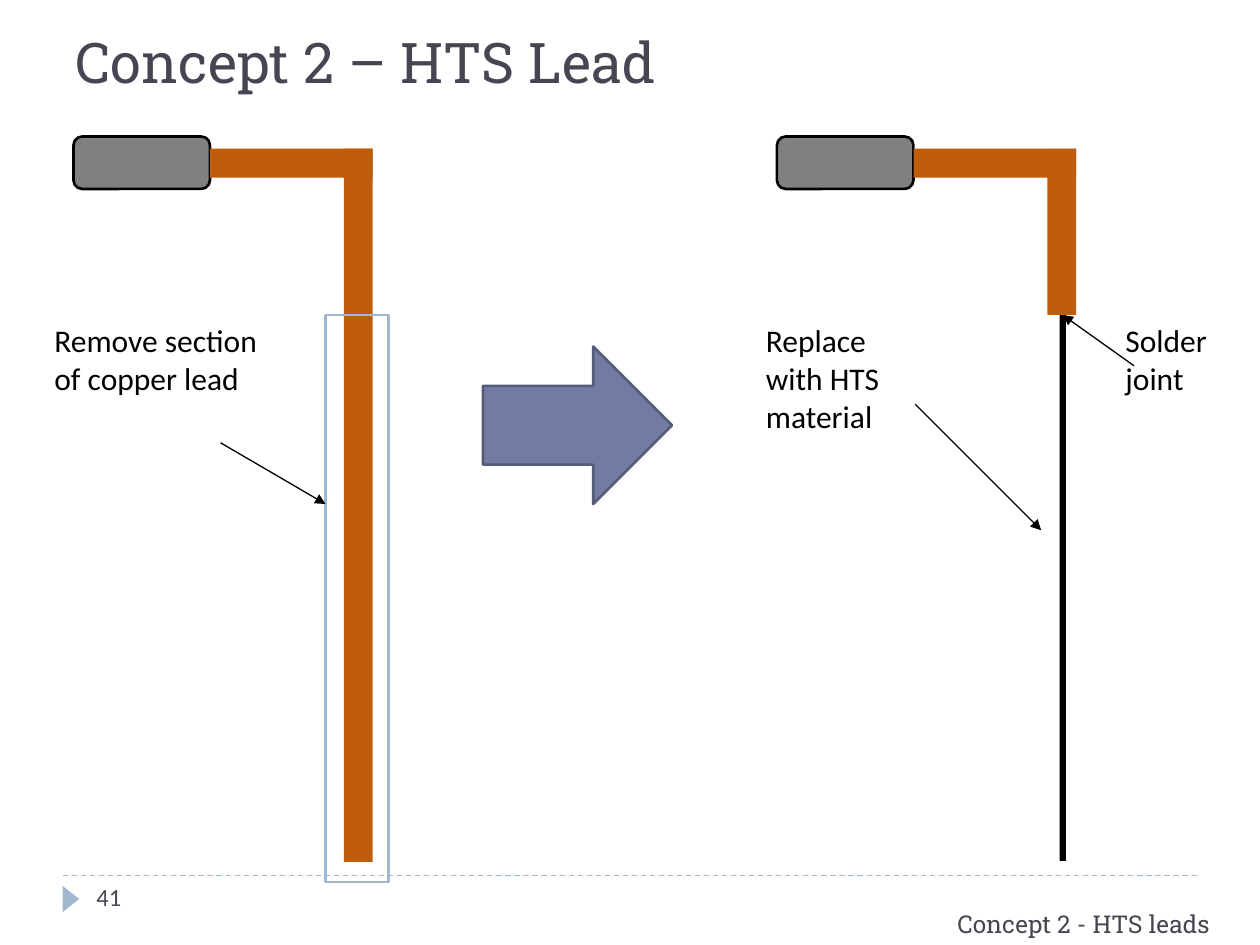
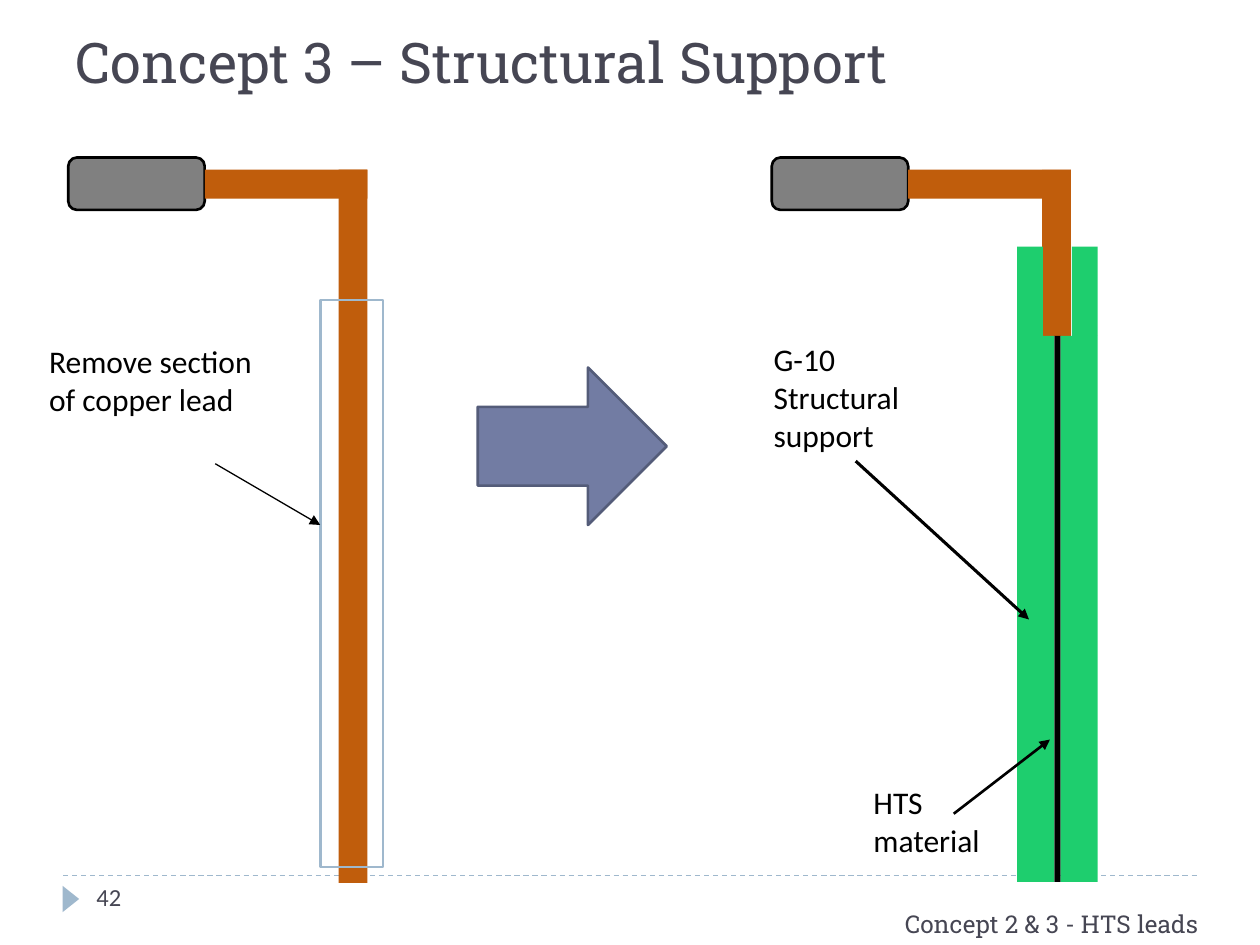
import pptx
import pptx.dml.color
import pptx.enum.dml
import pptx.enum.shapes
import pptx.enum.text
import pptx.oxml
import pptx.oxml.ns
import pptx.util

Pt = pptx.util.Pt
RGBColor = pptx.dml.color.RGBColor
SHAPE = pptx.enum.shapes.MSO_SHAPE
ANCHOR = pptx.enum.text.MSO_ANCHOR

INK = RGBColor(0x46, 0x46, 0x53)
BLACK = RGBColor(0x00, 0x00, 0x00)
PALE_BLUE = RGBColor(0x9F, 0xB8, 0xCD)
STEEL = RGBColor(0x80, 0x80, 0x80)
COPPER = RGBColor(0xC0, 0x5D, 0x0C)
ARROW_FILL = RGBColor(0x72, 0x7C, 0xA3)
ARROW_EDGE = RGBColor(0x54, 0x5C, 0x79)
SUPPORT_GREEN = RGBColor(0x1E, 0xCE, 0x6E)

HEADING_FONT = "Roboto Slab"
LABEL_FONT = "Calibri"

BAR = 16.5
ELBOW_RIGHT = 171
JOINT_TOP = 102
JOINT_CENTRE = 163.25
HTS_WIDTH = 3.6
HTS_LENGTH = 312
LONG_LEAD = 407.5
SHORT_LEAD = 95
AFTER_OFFSET = 402


def add_block(page, kind, left, top, width, height, fill=None, edge=None):
    """Add a preset shape with an optional fill and a 1.5 pt outline."""
    block = page.shapes.add_shape(kind, Pt(left), Pt(top), Pt(width), Pt(height))
    block.shadow.inherit = False
    if fill is None:
        block.fill.background()
    else:
        block.fill.solid()
        block.fill.fore_color.rgb = fill
    if edge is None:
        block.line.fill.background()
    else:
        block.line.color.rgb = edge
        block.line.width = Pt(1.5)
    return block


def add_line(page, start, end, color=BLACK, weight=0.75):
    """Add a straight connector without a shadow."""
    line = page.shapes.add_connector(
        pptx.enum.shapes.MSO_CONNECTOR.STRAIGHT, *map(Pt, start + end))
    line.line.color.rgb = color
    line.line.width = Pt(weight)
    properties = line._element.spPr
    properties.append(pptx.oxml.parse_xml(
        f'<a:effectLst {pptx.oxml.ns.nsdecls("a")}/>'))
    return line


def add_pointer(page, left, top, start, end, weight=0.75):
    """Add an arrow between two points given relative to a panel corner."""
    line = add_line(page, (left + start[0], top + start[1]),
                    (left + end[0], top + end[1]), weight=weight)
    line.line._get_or_add_ln().append(pptx.oxml.parse_xml(
        f'<a:tailEnd {pptx.oxml.ns.nsdecls("a")} type="triangle"/>'))


def style_text(box, text, size, font, color, anchor=ANCHOR.TOP):
    """Write one left-aligned paragraph into a text shape."""
    frame = box.text_frame
    frame.word_wrap = True
    frame.auto_size = pptx.enum.text.MSO_AUTO_SIZE.NONE
    frame.vertical_anchor = anchor
    frame.text = text
    para = frame.paragraphs[0]
    para.alignment = pptx.enum.text.PP_ALIGN.LEFT
    para.font.size = Pt(size)
    para.font.name = font
    para.font.color.rgb = color


def add_label(page, text, left, top, width, height, size=18,
              font=LABEL_FONT, color=BLACK, anchor=ANCHOR.TOP):
    """Add a wrapping text box."""
    box = page.shapes.add_textbox(Pt(left), Pt(top), Pt(width), Pt(height))
    style_text(box, text, size, font, color, anchor)


def add_frame(deck, title, number, footer, footer_left):
    """Add a page with its title, footer rule, page marker and footer."""
    page = deck.slides.add_slide(deck.slide_layouts[5])
    heading = page.shapes.title
    heading.left, heading.top, heading.width, heading.height = map(
        Pt, (36, 12, 648, 78))
    style_text(heading, title, 32, HEADING_FONT, INK)
    rule = add_line(page, (36, 500.4), (684, 500.4), PALE_BLUE)
    rule.line.dash_style = pptx.enum.dml.MSO_LINE.DASH
    marker = add_block(page, SHAPE.ISOSCELES_TRIANGLE, 33, 509, 15, 9.4, PALE_BLUE)
    marker.rotation = 90
    add_label(page, number, 48, 500.4, 156, 29, 14, color=INK)
    add_label(page, footer, footer_left, 504, 720 - footer_left, 36, 14,
              HEADING_FONT, INK, ANCHOR.BOTTOM)
    return page


def add_lead(page, left, top, length):
    """Draw the terminal and its copper elbow with a drop of the given length."""
    add_block(page, SHAPE.ROUNDED_RECTANGLE, left, top, 78, 30, STEEL, BLACK)
    bar_top = top + 7
    add_block(page, SHAPE.RECTANGLE, left + 78, bar_top, ELBOW_RIGHT - 78, BAR, COPPER)
    add_block(page, SHAPE.RECTANGLE, left + ELBOW_RIGHT - BAR, bar_top,
              BAR, length, COPPER)


def add_before_panel(page, left, top, cut_top):
    """Draw the full copper lead, the section to remove and the step arrow."""
    add_lead(page, left, top, LONG_LEAD)
    add_block(page, SHAPE.RECTANGLE, left + 144, top + cut_top, 36, 324, edge=PALE_BLUE)
    add_label(page, "Remove section of copper lead", left - 18, top + 102, 143, 73)
    add_pointer(page, left, top, (84, 175), (144, 210))
    add_block(page, SHAPE.RIGHT_ARROW, left + 234, top + 120, 108, 90,
              ARROW_FILL, ARROW_EDGE)


def add_hts_lead(page, left, top):
    """Draw the shortened copper lead continued by the HTS strip."""
    add_lead(page, left, top, SHORT_LEAD)
    add_block(page, SHAPE.RECTANGLE, left + JOINT_CENTRE - HTS_WIDTH / 2,
              top + JOINT_TOP, HTS_WIDTH, HTS_LENGTH, BLACK)


def add_solder_panel(page, left, top):
    """Draw the HTS lead with its material and solder joint labels."""
    add_hts_lead(page, left, top)
    add_label(page, "Replace with HTS material", left - 13.4, top + 102, 106, 73)
    add_pointer(page, left, top, (79, 153), (151, 225))
    add_label(page, "Solder joint", left + 192, top + 102, 84, 51)
    add_pointer(page, left, top, (204, 131), (JOINT_CENTRE, JOINT_TOP))


def add_support_panel(page, left, top):
    """Draw the HTS lead between green supports, with labels."""
    add_hts_lead(page, left, top)
    half_width = 23
    sections = ((51, JOINT_TOP - 51, BAR / 2),
                (JOINT_TOP, HTS_LENGTH, HTS_WIDTH / 2))
    for section_top, height, gap in sections:
        width = half_width - gap
        for offset in (-half_width, gap):
            add_block(page, SHAPE.RECTANGLE, left + JOINT_CENTRE + offset,
                      top + section_top, width, height, SUPPORT_GREEN)
    add_label(page, "G-10 Structural support", left - 6, top + 101, 108, 73)
    add_pointer(page, left, top, (48, 173.5), (147, 264), 1.75)
    add_label(page, "HTS material", left + 51, top + 354, 106, 51)
    add_pointer(page, left, top, (104, 375), (159, 332.6), 1.5)


def add_concept(deck, frame, left, top, cut_top, add_after_panel):
    """Build one concept page: the lead before and after the change."""
    page = add_frame(deck, *frame)
    add_before_panel(page, left, top, cut_top)
    add_after_panel(page, left + AFTER_OFFSET, top)


def main():
    """Build and save the two concept pages."""
    deck = pptx.Presentation()
    deck.slide_width, deck.slide_height = Pt(720), Pt(540)
    add_concept(deck, ("Concept 2 – HTS Lead", "41", "Concept 2 - HTS leads", 540),
                42, 78, 102, add_solder_panel)
    add_concept(deck, ("Concept 3 – Structural Support", "42",
                       "Concept 2 & 3 - HTS leads", 510),
                39, 90, 81.4, add_support_panel)
    deck.save("out.pptx")


if __name__ == "__main__":
    main()
